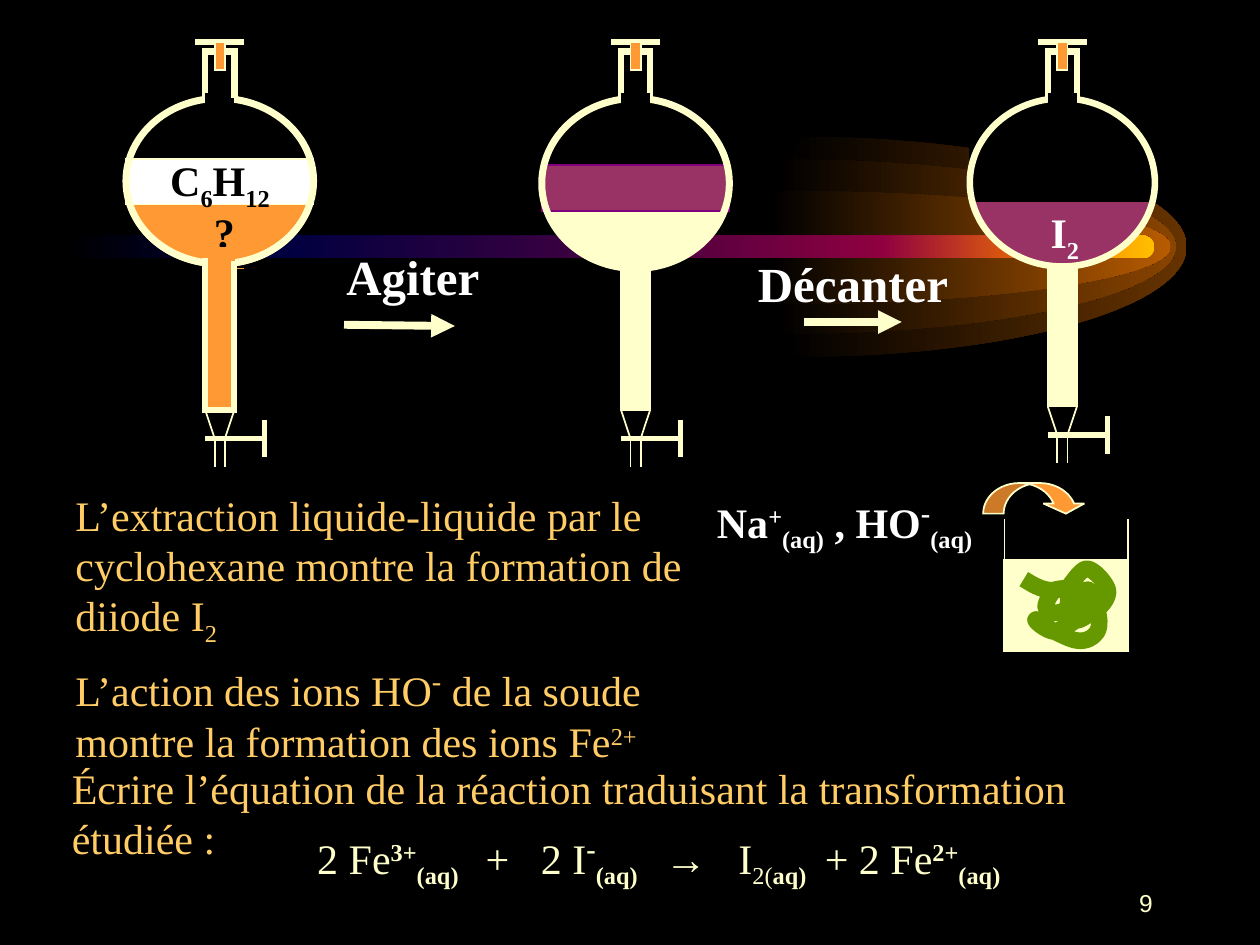
from lxml.etree import SubElement
from pptx import Presentation
from pptx.dml.color import RGBColor
from pptx.enum.shapes import MSO_CONNECTOR as CONN, MSO_SHAPE as SHAPE
from pptx.enum.text import MSO_ANCHOR as ANCHOR, PP_ALIGN as ALIGN
from pptx.oxml.ns import qn
from pptx.util import Pt

CREAM, ORANGE, GOLD, PURPLE = "FFFFCC", "FF9933", "FFCC66", "993366"
BLACK, WHITE, GREEN = "000000", "FFFFFF", "669900"
NECK = 8.3  # half width of a flask's neck and stem

# Start point, then two control points and an end point per curve
SCRIBBLE = [
    (585.4, 331.2),
    (589.7, 334.1), (593.3, 336.2), (597.6, 337), (601.2, 338.4), (607, 335.5), (609.1, 337),
    (611.3, 339.1), (611.3, 347), (609.1, 348.5), (607, 350.6), (598.3, 350.6), (597.6, 348.5),
    (596.2, 347), (600.5, 339.1), (603.4, 337), (606.2, 335.5), (612, 335.5), (614.9, 337),
    (617.8, 339.1), (622.8, 344.9), (621.4, 348.5), (619.2, 352.8), (608.4, 359.3), (603.4, 360.7),
    (598.3, 361.4), (589.7, 353.5), (591.8, 354.2), (593.3, 355.7), (609.1, 365), (614.9, 366.5),
    (621.4, 367.2), (625, 363.6), (627.1, 360.7), (629.3, 357.1), (627.8, 352.8), (627.1, 348.5),
    (625.7, 344.9), (622.8, 336.2), (621.4, 337), (619.2, 338.4), (614.2, 352.8), (614.9, 354.2),
    (616.3, 356.4), (622.1, 351.4), (627.1, 348.5), (630, 345.6), (633.6, 341.3), (632.9, 337),
    (632.2, 333.4), (625, 325.4), (621.4, 325.4), (617, 325.4), (611.3, 335.5), (609.1, 337),
]


def rgb(color):
    return RGBColor.from_string(color)


def style(sp, fill=None, line=None, width=1):
    sp.shadow.inherit = False
    if fill:
        sp.fill.solid()
        sp.fill.fore_color.rgb = rgb(fill)
    else:
        sp.fill.background()
    if line:
        sp.line.color.rgb = rgb(line)
        sp.line.width = Pt(width)
    else:
        sp.line.fill.background()
    return sp


def add_shape(s, kind, x, y, w, h, **look):
    sp = style(s.shapes.add_shape(kind, Pt(x), Pt(y), Pt(w), Pt(h)), **look)
    if look.get("line"):
        SubElement(sp.line._get_or_add_ln(), qn("a:miter"), lim="800000")
    return sp


def add_line(s, x1, y1, x2, y2, color=CREAM, width=1, arrow=False):
    c = s.shapes.add_connector(CONN.STRAIGHT, Pt(x1), Pt(y1), Pt(x2), Pt(y2))
    c.line.color.rgb = rgb(color)
    c.line.width = Pt(width)
    if arrow:
        SubElement(c.line._get_or_add_ln(), qn("a:tailEnd"), type="triangle")
    SubElement(c._element.spPr, qn("a:effectLst"))


def add_curve(s, points, close, **look):
    """Start point, then triples for cubic curves; points left over are corners."""
    builder = s.shapes.build_freeform(*points[0], scale=float(Pt(1)))
    builder.add_line_segments(points[1:], close=close)
    sp = style(builder.convert_to_shape(), **look)
    steps = list(sp._element.iter(qn("a:lnTo")))[:len(points) - 1]
    for i in range(0, len(steps) - 2, 3):
        curve = steps[i].makeelement(qn("a:cubicBezTo"))
        steps[i].addprevious(curve)
        for step in steps[i:i + 3]:
            curve.append(step[0])
            step.getparent().remove(step)
    return sp


def set_gradient(sp, stops):
    sp.fill.gradient()
    sp.fill.gradient_angle = 0
    gs_list = sp._element.spPr.find(qn("a:gradFill")).find(qn("a:gsLst"))
    for gs in list(gs_list):
        gs_list.remove(gs)
    for pos, color in stops:
        gs = SubElement(gs_list, qn("a:gs"), pos=str(pos * 1000))
        SubElement(gs, qn("a:srgbClr"), val=color)


def add_text(s, x, y, w, h, *paragraphs, size=24, color=WHITE, bold=False,
             font="Times New Roman", align=ALIGN.LEFT, anchor=ANCHOR.TOP):
    """Each paragraph is a list of runs: text, or (text, baseline %, other format)."""
    tf = s.shapes.add_textbox(Pt(x), Pt(y), Pt(w), Pt(h)).text_frame
    tf.word_wrap = True
    tf.vertical_anchor = anchor
    for i, runs in enumerate(paragraphs):
        p = tf.add_paragraph() if i else tf.paragraphs[0]
        p.alignment = align
        for run in runs:
            text, base, fmt = (run, 0, {}) if isinstance(run, str) else (*run, {})[:3]
            r = p.add_run()
            r.text = text
            r.font.name = font
            r.font.size = Pt(fmt.get("size", size))
            r.font.bold = fmt.get("bold", bold)
            r.font.color.rgb = rgb(color)
            if base:
                r.font._element.set("baseline", str(base * 1000))


def add_comet(s):
    cy, rx, k = 141.1, 225.4, 0.55
    for cx, ry, color in ((452.9, 63, "663300"), (447.1, 49.8, "894400"), (443.5, 32.5, "B75B00")):
        top, bottom, right = cy - ry, cy + ry, cx + rx
        half = [(cx - 0.5, top), (cx - 0.3, top), (cx - 0.2, top), (cx, top),
                (cx + k * rx, top), (right, cy - k * ry), (right, cy),
                (right, cy + k * ry), (cx + k * rx, bottom), (cx, bottom),
                (cx - 1.2, bottom), (cx - 2.4, bottom), (cx - 3.6, bottom), (cx, cy)]
        set_gradient(add_curve(s, half, True), [(0, BLACK), (100, color)])
    bar = add_shape(s, SHAPE.ROUNDED_RECTANGLE, 36, 134.6, 623.5, 13)
    bar.adjustments[0] = 0.5
    set_gradient(bar, [(0, BLACK), (20, "000040"), (50, "400040"),
                       (75, "8F0040"), (90, "F27300"), (100, "FFBF00")])


def add_flask(s, cx, liquid, stem, stem_top, stem_end, bottom, stem_line=1, layer=None,
              glass=4, w=107.2, join=153.4):
    left = cx - w / 2
    # Liquid in the lower part of the bulb
    add_shape(s, SHAPE.OVAL, left, 61.2, w, 91.1, fill=liquid, line=CREAM)
    add_shape(s, SHAPE.RECTANGLE, left, 61.2, w, 53.6, fill=BLACK, line=BLACK)
    # Neck, lid and stopper
    add_shape(s, SHAPE.RECTANGLE, cx - NECK, 29.5, 2 * NECK, 27, line=CREAM, width=3.75)
    add_line(s, cx - 14, 24, cx + 14, 24, width=3)
    add_shape(s, SHAPE.RECTANGLE, cx - 2.9, 24, 5.8, 16.2, fill=ORANGE, line=CREAM)
    add_line(s, cx - NECK, 56.2, cx + NECK, 56.2, color=BLACK)
    # Stem
    add_shape(s, SHAPE.RECTANGLE, cx - NECK, stem_top, 2 * NECK, stem_end - stem_top,
              fill=stem, line=CREAM, width=stem_line)
    add_line(s, cx - NECK, join, cx + 13.7, join, color=stem)
    # Tap
    tap = stem_end + 16.2
    for side in (-1, 1):
        add_line(s, cx + side * NECK, stem_end, cx + side * 2.9, tap)
        add_line(s, cx + side * 2.9, tap, cx + side * 2.9, tap + 16)
    add_line(s, cx - NECK, tap, cx + 25.6, tap, width=3)
    add_line(s, cx + 25.6, tap - 10.8, cx + 25.6, tap + 10.8, width=3)
    # Upper layer, glass and opening
    if layer:
        y, fill, line = layer
        add_shape(s, SHAPE.RECTANGLE, left, y, w, 26.2, fill=fill, line=line)
    add_shape(s, SHAPE.OVAL, left, 56.2, w, bottom - 56.2, line=CREAM, width=glass)
    add_line(s, cx - NECK, 56.2, cx + NECK, 56.2, color=BLACK, width=6)


def add_full_flask(s, cx):
    """The first flask: its stem is filled too, and open towards the bulb."""
    left, right = cx - NECK, cx + NECK
    add_line(s, left, 151.9, right, 151.9, color=ORANGE, width=5.75)
    add_flask(s, cx, ORANGE, ORANGE, 150.7, 234.4, 150.7, stem_line=3.5, layer=(90.7, WHITE, CREAM))
    add_text(s, 115.2, 114.3, 26.6, 36, ["?"], color=BLACK, bold=True)
    add_text(s, 90.2, 85, 74.2, 36, ["C", ("6", -25), "H", ("12", -25)], color=BLACK, bold=True)
    add_shape(s, SHAPE.RECTANGLE, left, 141.8, 2 * NECK, 14.4, fill=ORANGE, line=ORANGE)
    add_line(s, left, 147.6, left, 182.2, width=3.5)
    add_line(s, right, 149, right, 184.3, width=3.5)
    add_line(s, right, 43.2, right, 56.2, width=3.5)


def add_beaker(s):
    add_shape(s, SHAPE.RECTANGLE, 573.8, 319.9, 70.6, 52, fill=CREAM, line=CREAM)
    add_line(s, 574, 296.6, 574, 342.7)
    add_line(s, 644.6, 296.6, 644.6, 337)
    arrow = add_shape(s, SHAPE.CURVED_DOWN_ARROW, 561.8, 276, 59, 17.5, fill=ORANGE, line=CREAM)
    for i, value in enumerate((0.67, 1.34, 0.33)):
        arrow.adjustments[i] = value
    # Green precipitate
    add_curve(s, SCRIBBLE, False, line=GREEN, width=9.5)


def main():
    prs = Presentation()
    prs.slide_width, prs.slide_height = Pt(720), Pt(540)
    s = prs.slides.add_slide(prs.slide_layouts[6])
    s.background.fill.solid()
    s.background.fill.fore_color.rgb = rgb(BLACK)
    add_comet(s)

    # Slide number and conclusions
    add_text(s, 516, 498, 149.8, 36, ["9"], size=14, color=CREAM, font="Arial",
             align=ALIGN.RIGHT, anchor=ANCHOR.MIDDLE)
    add_text(s, 36, 276, 366.5, 93.6, ["L’extraction liquide-liquide par le"],
             ["cyclohexane montre la formation de"], ["diiode I", ("2", -25)], color=GOLD)
    add_text(s, 36, 372, 346.3, 64.8,
             ["L’action des ions HO", ("-", 30, {"size": 28}), " de la soude"],
             ["montre la formation des ions Fe", ("2+", 30)], color=GOLD)
    add_text(s, 34, 432, 669.6, 36,
             ["Écrire l’équation de la réaction traduisant la transformation étudiée :"], color=GOLD)

    # Equation
    bold = {"bold": True}
    add_text(s, 174.2, 468, 432, 59.8,
             ["2 Fe", ("3+", 30, bold), ("(aq) ", -25, bold), "  +   2 I",
              ("-", 30, {"size": 28, "bold": True}), ("(aq) ", -25, bold), "  →   I",
              ("2(", -25), ("aq)   ", -25, bold), "+ 2 Fe", ("2+", 30, bold), ("(aq)", -25, bold)],
             color=CREAM)

    # Soda test
    add_text(s, 402.6, 276, 169.9, 36,
             ["Na", ("+", 30), ("(aq)", -25), " , HO", ("-", 30, {"size": 28}), ("(aq)", -25)],
             bold=True)
    add_beaker(s)

    # Settled flask
    add_text(s, 426, 141.5, 130.3, 41, ["Décanter"], size=28, bold=True)
    add_line(s, 459.4, 184, 515.3, 184, width=4.5, arrow=True)
    add_flask(s, 607.1, PURPLE, CREAM, 152, 232.4, 152.3, glass=3.75, w=105.8, join=152)
    add_text(s, 593.3, 114.5, 31.7, 36, ["I", ("2", -25)], bold=True)

    # Flasks before and after shaking
    add_full_flask(s, 125.6)
    add_flask(s, 363.2, CREAM, CREAM, 153.4, 234.4, 153.4, layer=(94.3, PURPLE, "800080"))
    add_text(s, 190.8, 137.5, 97.9, 41, ["Agiter"], size=28, bold=True)
    add_line(s, 196.6, 185.6, 259.9, 186.3, width=4.5, arrow=True)
    prs.save("out.pptx")


if __name__ == "__main__":
    main()
